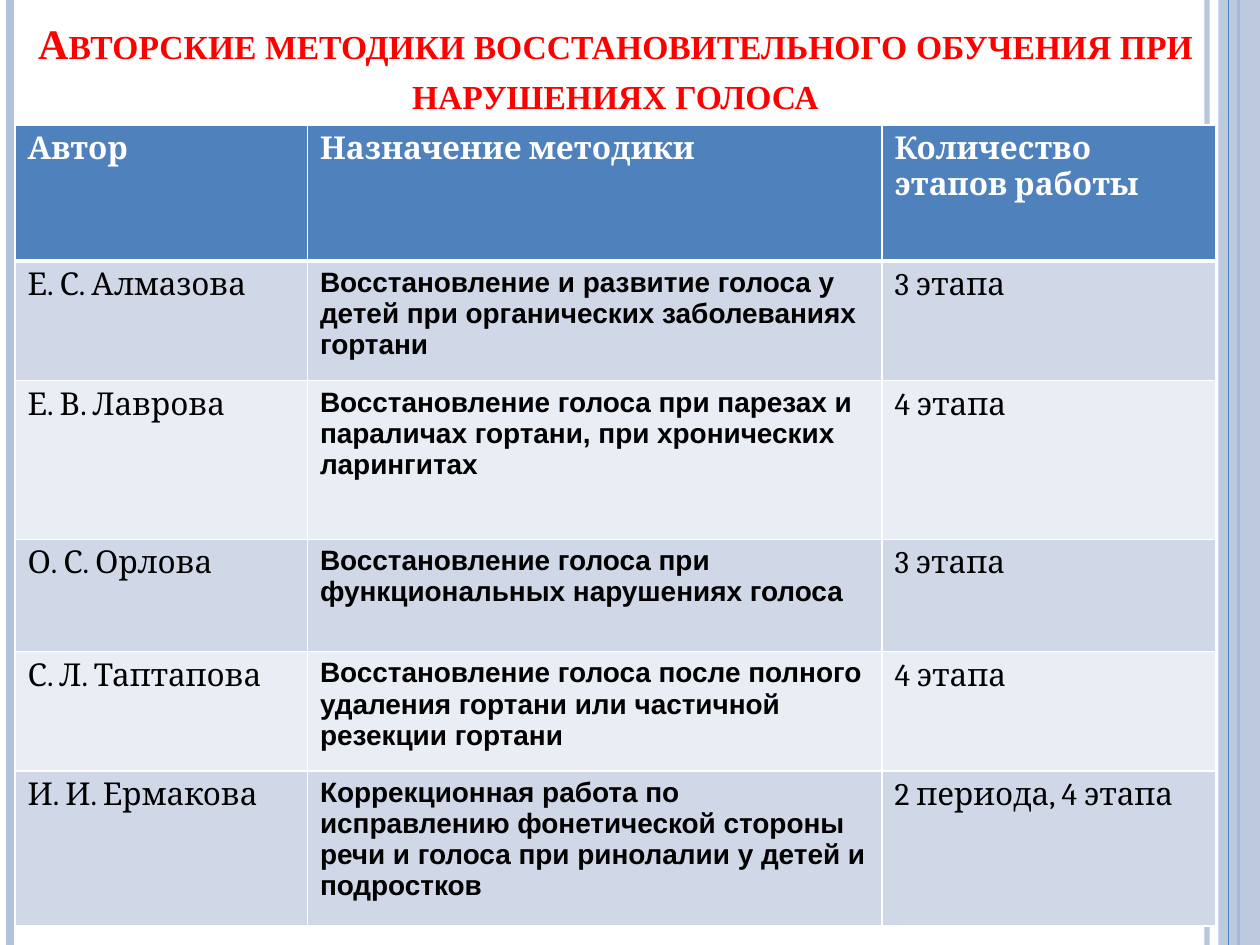
from lxml.etree import SubElement
from pptx import Presentation
from pptx.dml.color import RGBColor
from pptx.enum.shapes import MSO_CONNECTOR, MSO_SHAPE
from pptx.enum.text import MSO_ANCHOR, MSO_AUTO_SIZE, PP_ALIGN
from pptx.oxml.ns import qn
from pptx.util import Inches, Pt

WHITE = RGBColor(0xFF, 0xFF, 0xFF)
BLACK = RGBColor(0, 0, 0)
RED = RGBColor(0xFF, 0, 0)
BLUE = RGBColor(0x4F, 0x81, 0xBD)
PALE_BLUE = RGBColor(0xB3, 0xC1, 0xDB)
BANDS = (RGBColor(0xD0, 0xD8, 0xE8), RGBColor(0xE9, 0xED, 0xF4))

TITLE = "Авторские методики восстановительного обучения при нарушениях голоса"
METHODS = (
    ("Автор", "Назначение методики", "Количество этапов работы"),
    ("Е. С. Алмазова",
     "Восстановление и развитие голоса у детей при органических заболеваниях гортани",
     "3 этапа"),
    ("Е. В. Лаврова",
     "Восстановление голоса при парезах и параличах гортани, при хронических ларингитах",
     "4 этапа"),
    ("О. С. Орлова",
     "Восстановление голоса при функциональных нарушениях голоса",
     "3 этапа"),
    ("С. Л. Таптапова",
     "Восстановление голоса после полного удаления гортани или частичной резекции гортани",
     "4 этапа"),
    ("И. И. Ермакова",
     "Коррекционная работа по исправлению фонетической стороны речи и голоса "
     "при ринолалии у детей и подростков",
     "2 периода, 4 этапа"),
)
COLUMN_SHARES = (23.2, 45.6, 26.5)
ROW_SHARES = (14.4, 12.67, 16.8, 11.87, 12.67, 16.4)
LEFT, TITLE_TOP, TITLE_HEIGHT = 1.2, 4.8, 8.4
TABLE_WIDTH, TABLE_TOP = sum(COLUMN_SHARES), TITLE_TOP + TITLE_HEIGHT


class SlideBuilder:
    """Styles and draws the elements of one slide, with lengths in percent of its size."""

    def __init__(self, deck):
        self.width, self.height = deck.slide_width, deck.slide_height
        self.page = deck.slides.add_slide(deck.slide_layouts[5])

    def across(self, share):
        return round(self.width * share / 100)

    def down(self, share):
        return round(self.height * share / 100)

    def area(self, left, top, width, height):
        return self.across(left), self.down(top), self.across(width), self.down(height)

    def set_opacity(self, shape, percent):
        color = next(shape._element.spPr.iter(qn("a:srgbClr")))
        SubElement(color, qn("a:alpha"), val=str(percent * 1000))

    def vertical_line(self, left, color, weight, opacity=100):
        x = self.across(left)
        line = self.page.shapes.add_connector(MSO_CONNECTOR.STRAIGHT, x, 0, x, self.height)
        line.line.color.rgb = color
        line.line.width = Pt(weight)
        SubElement(line._element.spPr, qn("a:effectLst"))
        self.set_opacity(line, opacity)

    def stripe(self, left, width, color, opacity):
        box = self.page.shapes.add_shape(MSO_SHAPE.RECTANGLE, *self.area(left, 0, width, 100))
        box.shadow.inherit = False
        box.fill.solid()
        box.fill.fore_color.rgb = color
        box.line.fill.background()
        self.set_opacity(box, opacity)

    def style(self, font, name, size, color, bold):
        font.name, font.size, font.bold = name, Pt(size), bold
        font.color.rgb = color

    def title(self, text):
        box = self.page.shapes.title
        box.left, box.top, box.width, box.height = self.area(
            LEFT, TITLE_TOP, TABLE_WIDTH, TITLE_HEIGHT)
        frame = box.text_frame
        frame.text = text
        frame.word_wrap = True
        frame.auto_size = MSO_AUTO_SIZE.NONE
        frame.vertical_anchor = MSO_ANCHOR.BOTTOM
        para = frame.paragraphs[0]
        para.alignment = PP_ALIGN.CENTER
        span = para.runs[0]
        self.style(span.font, "Times New Roman", 24, RED, True)
        span._r.get_or_add_rPr().set("cap", "small")

    def borders(self, cell, **weights):
        properties = cell._tc.get_or_add_tcPr()
        for side in ("L", "R", "T", "B"):
            line = SubElement(properties, qn(f"a:ln{side}"), w=str(Pt(weights.get(side, 1))))
            fill = SubElement(line, qn("a:solidFill"))
            SubElement(fill, qn("a:srgbClr"), val=str(WHITE))

    def cell(self, cell, text, row, column):
        header = row == 0
        self.borders(cell, T=3 if row == 1 else 1, B=3 if header else 1)
        cell.fill.solid()
        cell.fill.fore_color.rgb = BLUE if header else BANDS[(row - 1) % 2]
        cell.text = text
        purpose = column == 1 and not header
        name, size = ("Arial", 16) if purpose else ("Cambria", 18)
        self.style(cell.text_frame.paragraphs[0].font, name, size,
                   WHITE if header else BLACK, header or purpose)

    def table(self, rows):
        place = self.area(LEFT, TABLE_TOP, TABLE_WIDTH, sum(ROW_SHARES))
        table = self.page.shapes.add_table(len(rows), len(COLUMN_SHARES), *place).table
        for column, share in zip(table.columns, COLUMN_SHARES):
            column.width = self.across(share)
        for row, share in zip(table.rows, ROW_SHARES):
            row.height = self.down(share)
        for i, texts in enumerate(rows):
            for j, text in enumerate(texts):
                self.cell(table.cell(i, j), text, i, j)


def main():
    deck = Presentation()
    deck.slide_width, deck.slide_height = Inches(10), Inches(7.5)
    slide = SlideBuilder(deck)
    slide.vertical_line(95.8, PALE_BLUE, 3, 93)
    slide.vertical_line(0.8, PALE_BLUE, 4.5)
    slide.vertical_line(98.3, BLUE, 1.5)
    slide.stripe(96.7, 3.3, PALE_BLUE, 87)
    slide.vertical_line(97.5, BLUE, 0.75)
    slide.title(TITLE)
    slide.table(METHODS)
    deck.save("out.pptx")


if __name__ == "__main__":
    main()
